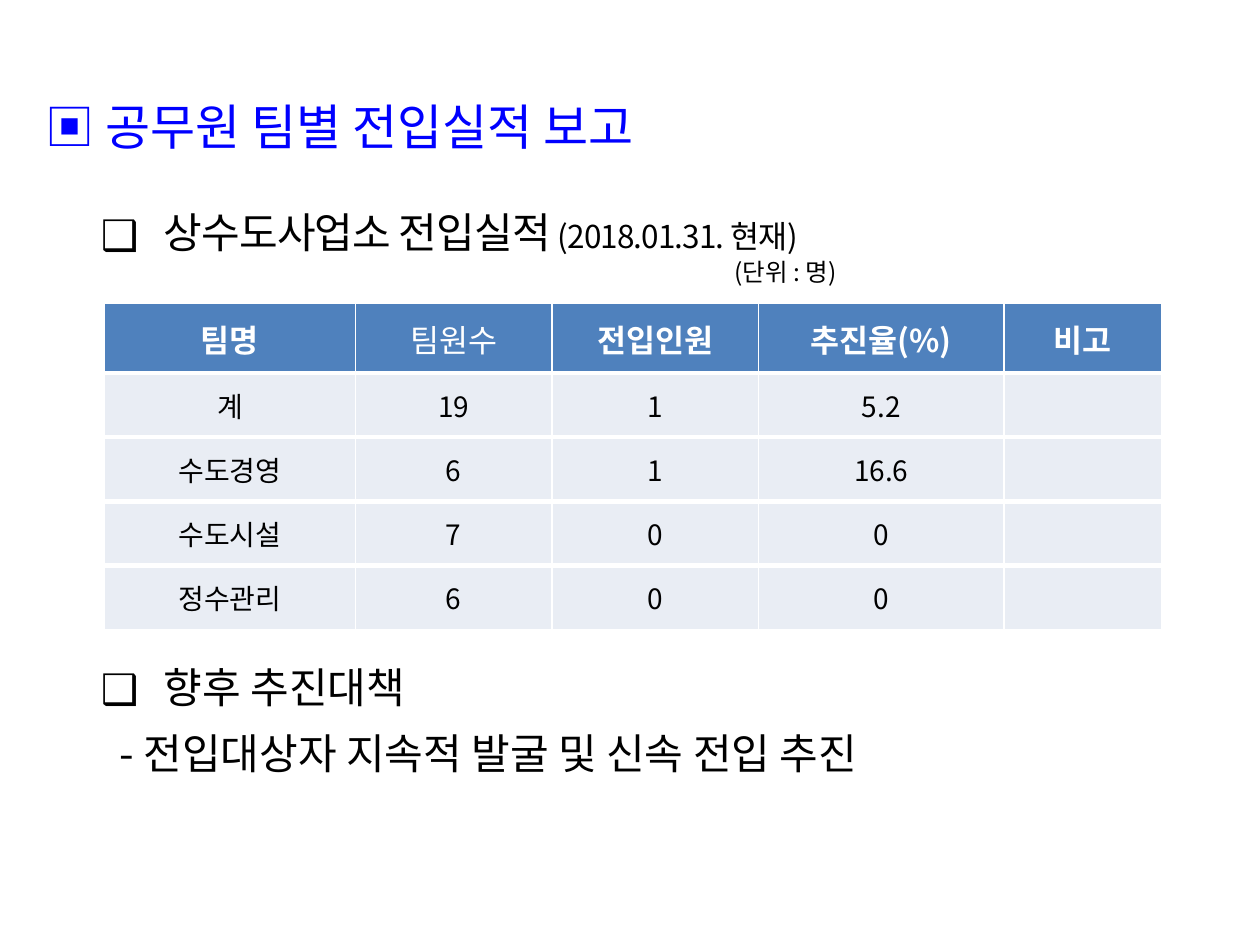
from pptx import Presentation
from pptx.dml.color import RGBColor as Rgb
from pptx.enum.text import MSO_ANCHOR as Anchor, PP_ALIGN as Align
from pptx.oxml.ns import qn
from pptx.util import Inches, Pt
from lxml.etree import SubElement as Sub

# Content
TITLE = "▣ 공무원 팀별 전입실적 보고"
STATUS, DATE = "상수도사업소 전입실적", " (2018.01.31. 현재)"
UNIT = "(단위 : 명)"
PLAN, STEP = "향후 추진대책", "- 전입대상자 지속적 발굴 및 신속 전입 추진"
ROWS = [
    ("팀명", "팀원수", "전입인원", "추진율(%)", "비고"),
    ("계", "19", "1", "5.2", ""),
    ("수도경영", "6", "1", "16.6", ""),
    ("수도시설", "7", "0", "0", ""),
    ("정수관리", "6", "0", "0", ""),
]
PLAIN = "팀원수"  # the one header that is not bold

# Theme and layout
THEME = {
    "font": "Noto Sans CJK KR",
    "blue": Rgb(0, 0, 255), "black": Rgb(0, 0, 0), "white": Rgb(255, 255, 255),
    "head": Rgb(0x4F, 0x81, 0xBD), "body": Rgb(0xE9, 0xED, 0xF4),
    "title": 28, "sub": 24, "date": 18, "unit": 14, "th": 18, "td": 16,
}
WIDTHS = (1.99, 1.56, 1.64, 1.95, 1.25)
HEIGHTS = (0.55,) + (0.51,) * 4
LEFT = 0.8


def write(para, text, size, color="black", bold=False, space=None):
    run = para.add_run()
    run.text = text
    style = {"name": THEME["font"], "size": Pt(THEME[size]), "bold": bold}
    for key, val in style.items():
        setattr(run.font, key, val)
    run.font.color.rgb = THEME[color]
    props = run._r.get_or_add_rPr()
    Sub(props, qn("a:ea"), typeface=THEME["font"])
    if space is not None:
        props.set("spc", str(space))


def setup(frame, anchor=Anchor.MIDDLE):
    style = {"word_wrap": True, "vertical_anchor": anchor, "margin_left": 0,
             "margin_right": 0, "margin_top": 0, "margin_bottom": 0}
    for key, val in style.items():
        setattr(frame, key, val)
    return frame


def add_box(slide, left, top, width, height, anchor=Anchor.MIDDLE):
    area = map(Inches, (left, top, width, height))
    return setup(slide.shapes.add_textbox(*area).text_frame, anchor)


def indent(para, left, first=0, bullet=None):
    props = para._p.get_or_add_pPr()
    props.set("marL", str(Inches(left)))
    props.set("indent", str(Inches(first)))
    if bullet:
        tint = Sub(props, qn("a:buClr"))
        Sub(tint, qn("a:srgbClr"), val=str(THEME["black"]))
        Sub(props, qn("a:buFont"), typeface=THEME["font"])
        Sub(props, qn("a:buChar"), char=bullet)


def border(cell, sides):
    props = cell._tc.get_or_add_tcPr()
    for side, width in sides.items():
        line = Sub(props, qn("a:ln" + side), w=str(Pt(width)))
        fill = Sub(line, qn("a:solidFill"))
        Sub(fill, qn("a:srgbClr"), val=str(THEME["white"]))


def add_grid(slide):
    area = map(Inches, (0.83, 2.41, sum(WIDTHS), sum(HEIGHTS)))
    grid = slide.shapes.add_table(len(ROWS), len(WIDTHS), *area).table
    for col, width in zip(grid.columns, WIDTHS):
        col.width = Inches(width)
    last = len(ROWS) - 1
    for i, (row, height) in enumerate(zip(ROWS, HEIGHTS)):
        grid.rows[i].height = Inches(height)
        for j, text in enumerate(row):
            cell = grid.cell(i, j)
            border(cell, {"L": 1, "R": 1, "T": 3 if i else 1,
                          "B": 1 if i == last else 3})
            cell.fill.solid()
            cell.fill.fore_color.rgb = THEME["body" if i else "head"]
            cell.vertical_anchor = Anchor.MIDDLE
            para = cell.text_frame.paragraphs[0]
            para.alignment = Align.CENTER
            if text and i:
                write(para, text, "td")
            elif text:
                write(para, text, "th", "white", text != PLAIN)


def main():
    deck = Presentation()
    deck.slide_width, deck.slide_height = Inches(10), Inches(7.5)
    slide = deck.slides.add_slide(deck.slide_layouts[5])

    # Title
    title = slide.shapes.title
    spot = {"left": 0.36, "top": 0.7, "width": 9.2, "height": 0.6}
    for key, val in spot.items():
        setattr(title, key, Inches(val))
    para = setup(title.text_frame).paragraphs[0]
    para.alignment = Align.LEFT
    write(para, TITLE, "title", "blue")

    # Status heading and unit note
    para = add_box(slide, LEFT, 1.59, 8.4, 0.5).paragraphs[0]
    indent(para, 0.5, -0.5, "❑")
    write(para, STATUS, "sub", space=-50)
    write(para, DATE, "date", space=-50)
    para = add_box(slide, 4.64, 2.01, 2, 0.3).paragraphs[0]
    para.alignment = Align.RIGHT
    write(para, UNIT, "unit")

    # Results by team
    add_grid(slide)

    # Plan
    frame = add_box(slide, LEFT, 5.25, 8.4, 1.2, Anchor.TOP)
    para = frame.paragraphs[0]
    indent(para, 0.5, -0.5, "❑")
    write(para, PLAN, "sub")
    para = frame.add_paragraph()
    para.space_before = Pt(8.7)
    indent(para, 0.15)
    write(para, STEP, "sub")

    deck.save("out.pptx")


if __name__ == "__main__":
    main()
